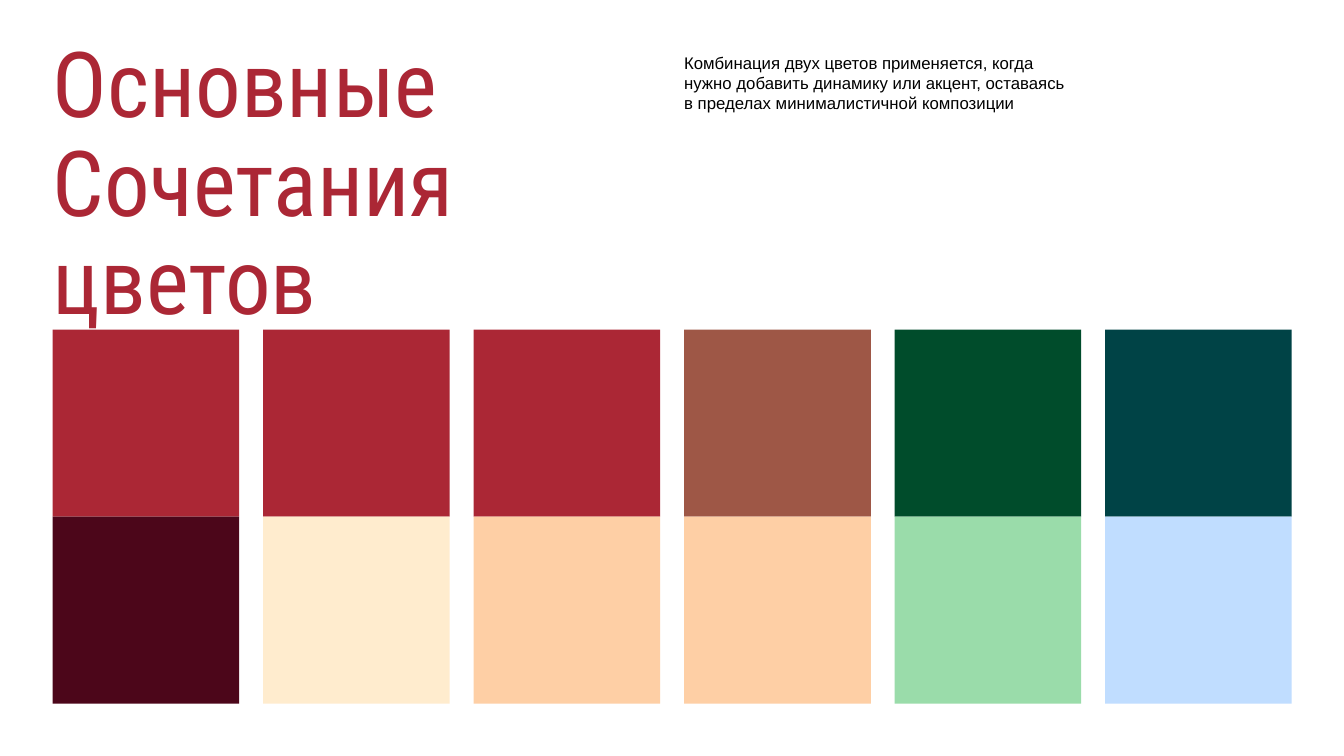
from pptx import Presentation
from pptx.dml.color import RGBColor
from pptx.enum.shapes import MSO_SHAPE
from pptx.enum.text import MSO_ANCHOR
from pptx.util import Pt

RECT = MSO_SHAPE.RECTANGLE
TOP = MSO_ANCHOR.TOP

LEFT, ROW = 37.6, 235.4
WIDE, HIGH = 133.3, 133.6
STEP = 150.36

RED, PEACH = "AB2735", "FECFA5"
PAIRS = [
    (RED, "4C061A"),
    (RED, "FFECCE"),
    (RED, PEACH),
    ("9E5746", PEACH),
    ("004C2B", "9ADCAA"),
    ("004346", "C0DDFF"),
]


def color(code):
    return RGBColor.from_string(code)


def add_text(slide, text, box, size, face, code, lead=None):
    frame = slide.shapes.add_textbox(*map(Pt, box)).text_frame
    frame.word_wrap = True
    frame.vertical_anchor = TOP
    frame.margin_left = frame.margin_right = 0
    frame.margin_top = frame.margin_bottom = 0
    frame.text = text
    para = frame.paragraphs[0]
    para.line_spacing = lead
    for run in para.runs:
        run.font.size = Pt(size)
        run.font.name = face
        run.font.color.rgb = color(code)


def add_pair(slide, left, codes):
    group = slide.shapes.add_group_shape()
    for row, code in enumerate(codes):
        tile = group.shapes.add_shape(
            RECT, Pt(left), Pt(ROW + row * HIGH), Pt(WIDE), Pt(HIGH))
        tile.shadow.inherit = False
        tile.fill.solid()
        tile.fill.fore_color.rgb = color(code)
        tile.line.fill.background()


def main():
    deck = Presentation()
    deck.slide_width, deck.slide_height = Pt(960), Pt(540)
    slide = deck.slides.add_slide(deck.slide_layouts[6])

    # Title and note
    add_text(slide, "Основные\vСочетания цветов",
             (LEFT, 28, 433.4, 142), 65, "Roboto Condensed", RED, 0.9)
    add_text(slide,
             "Комбинация двух цветов применяется, когда\v"
             "нужно добавить динамику или акцент, оставаясь\v"
             "в пределах минималистичной композиции",
             (LEFT + 3 * STEP, 37.6, 283.7, 98), 12, "Arial", "000000")

    # Colour pairs
    for col, codes in enumerate(PAIRS):
        add_pair(slide, LEFT + col * STEP, codes)

    deck.save("out.pptx")


if __name__ == "__main__":
    main()
